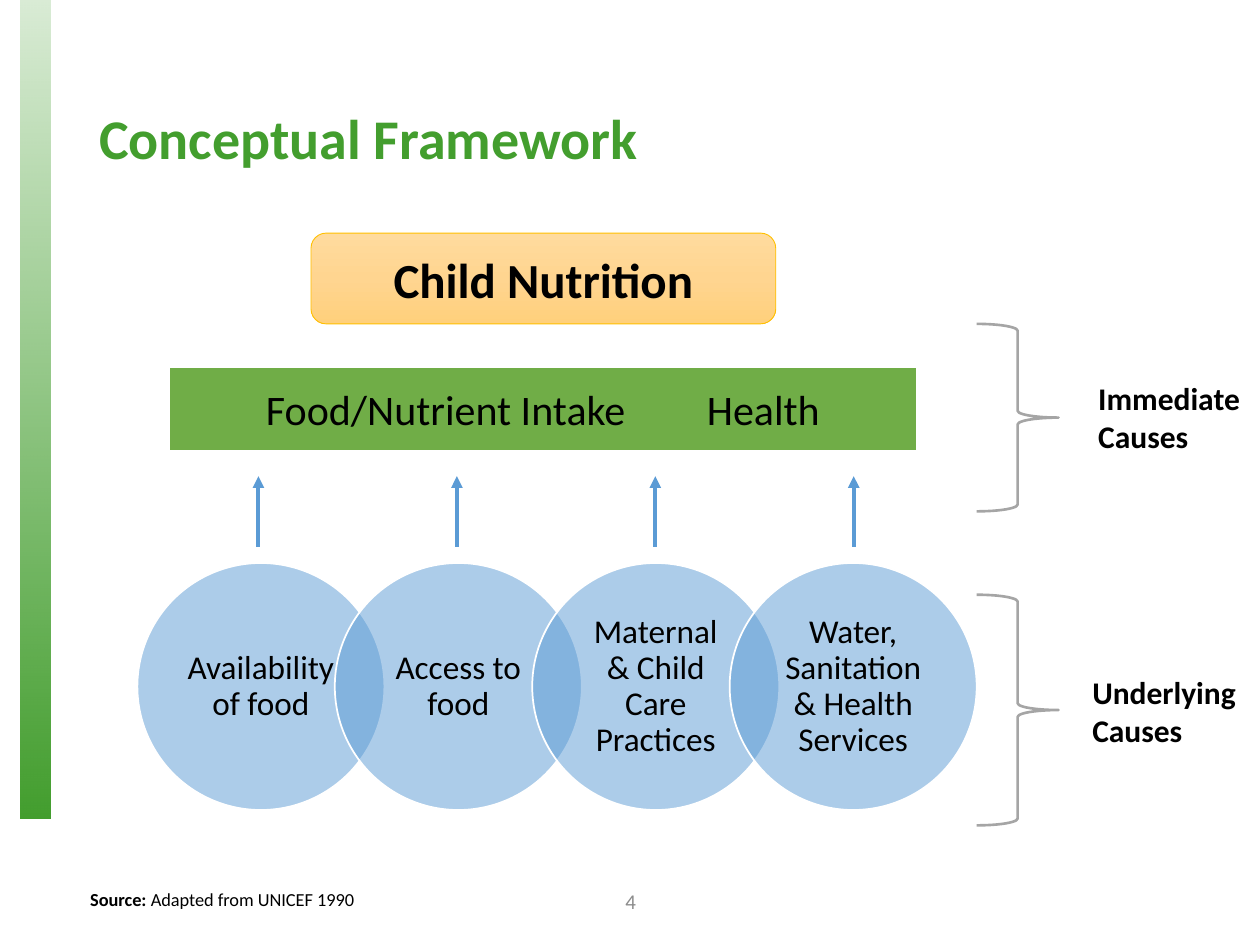
from dataclasses import dataclass

import pptx
import pptx.dml.color
import pptx.enum.shapes
import pptx.enum.text
import pptx.oxml
import pptx.oxml.ns
import pptx.util

Cm = pptx.util.Cm
Pt = pptx.util.Pt
Shape = pptx.enum.shapes.MSO_SHAPE
Align = pptx.enum.text.PP_ALIGN
Anchor = pptx.enum.text.MSO_ANCHOR

FONT = "Calibri"
COLORS = {
    "green": "439E2E",
    "bar": "70AD47",
    "blue": "5B9BD5",
    "gold": "FFC000",
    "gold_top": "FFDB9E",
    "gold_middle": "FFD590",
    "gold_bottom": "FFD07C",
    "gray": "A5A5A5",
    "number": "8C8C8C",
    "black": "000000",
    "white": "FFFFFF",
}


@dataclass
class Box:
    """Position and size in centimetres."""
    left: float
    top: float
    width: float
    height: float

    def lengths(self) -> tuple:
        return Cm(self.left), Cm(self.top), Cm(self.width), Cm(self.height)


@dataclass
class TextStyle:
    size: float
    color: str = "black"
    bold: bool = False
    align: Align = Align.LEFT
    anchor: Anchor = Anchor.TOP
    line_spacing: float = 1.0


@dataclass
class CauseGroup:
    label: str
    label_box: Box
    brace_box: Box


def rgb(name: str) -> pptx.dml.color.RGBColor:
    return pptx.dml.color.RGBColor.from_string(COLORS[name])


def write_text(shape, text: str, style: TextStyle) -> None:
    frame = shape.text_frame
    frame.word_wrap = True
    frame.vertical_anchor = style.anchor
    paragraph = frame.paragraphs[0]
    paragraph.text = text
    paragraph.alignment = style.align
    paragraph.line_spacing = style.line_spacing
    paragraph.font.name = FONT
    paragraph.font.size = Pt(style.size)
    paragraph.font.bold = style.bold
    paragraph.font.color.rgb = rgb(style.color)


def add_text(slide, box: Box, text: str, style: TextStyle):
    shape = slide.shapes.add_textbox(*box.lengths())
    write_text(shape, text, style)
    return shape


def add_shape(slide, kind: Shape, box: Box, fill: str = "", line: str = "", line_width: float = 1):
    shape = slide.shapes.add_shape(kind, *box.lengths())
    shape.shadow.inherit = False
    if fill:
        shape.fill.solid()
        shape.fill.fore_color.rgb = rgb(fill)
    else:
        shape.fill.background()
    if line:
        shape.line.color.rgb = rgb(line)
        shape.line.width = Pt(line_width)
    else:
        shape.line.fill.background()
    return shape


def set_opacity(color_element, percent: int) -> None:
    alpha = color_element.makeelement(pptx.oxml.ns.qn("a:alpha"), {"val": str(percent * 1000)})
    color_element.append(alpha)


def set_vertical_gradient(shape, stops: list[tuple[int, str, int]]) -> None:
    """Each stop is position in percent, colour name and opacity in percent."""
    shape.fill.gradient()
    stop_xml = "".join(
        f'<a:gs pos="{position * 1000}"><a:srgbClr val="{COLORS[color]}">'
        f'<a:alpha val="{opacity * 1000}"/></a:srgbClr></a:gs>'
        for position, color, opacity in stops
    )
    gradient = pptx.oxml.parse_xml(
        f'<a:gradFill {pptx.oxml.ns.nsdecls("a")} rotWithShape="1">'
        f'<a:gsLst>{stop_xml}</a:gsLst><a:lin ang="5400000" scaled="0"/></a:gradFill>'
    )
    properties = shape.element.spPr
    properties.replace(properties.find(pptx.oxml.ns.qn("a:gradFill")), gradient)


def add_up_arrow(slide, x: float, bottom: float, top: float) -> None:
    arrow = slide.shapes.add_connector(
        pptx.enum.shapes.MSO_CONNECTOR.STRAIGHT, Cm(x), Cm(bottom), Cm(x), Cm(top))
    arrow.line.color.rgb = rgb("blue")
    arrow.line.width = Pt(2.25)
    line = arrow.line._get_or_add_ln()
    line.append(line.makeelement(pptx.oxml.ns.qn("a:tailEnd"), {"type": "triangle"}))
    properties = arrow.element.spPr
    properties.append(properties.makeelement(pptx.oxml.ns.qn("a:effectLst"), {}))


def add_cause_circle(slide, left: float, text: str) -> None:
    top, diameter, inset = 11.35, 4.98, 0.73
    circle = add_shape(slide, Shape.OVAL, Box(left, top, diameter, diameter), "blue", "white")
    set_opacity(circle.element.spPr.find(".//" + pptx.oxml.ns.qn("a:srgbClr")), 50)
    inner = diameter - 2 * inset
    label = add_text(slide, Box(left + inset, top + inset, inner, inner), text,
                     TextStyle(19, align=Align.CENTER, anchor=Anchor.MIDDLE, line_spacing=0.9))
    frame = label.text_frame
    frame.margin_left = frame.margin_right = Cm(0.28)
    frame.margin_top = frame.margin_bottom = Cm(0.08)


def add_cause_group(slide, group: CauseGroup) -> None:
    add_shape(slide, Shape.RIGHT_BRACE, group.brace_box, line="gray", line_width=1.5)
    add_text(slide, group.label_box, group.label, TextStyle(18, bold=True))


def main() -> None:
    presentation = pptx.Presentation()
    presentation.slide_width = Cm(25.4)
    presentation.slide_height = Cm(19.05)
    slide = presentation.slides.add_slide(presentation.slide_layouts[6])

    # Side band, title and page number
    band = add_shape(slide, Shape.RECTANGLE, Box(0.41, 0, 0.61, 16.51))
    set_vertical_gradient(band, [(0, "green", 20), (100, "green", 100)])
    add_text(slide, Box(1.75, 1.02, 21.9, 3.68), "Conceptual Framework",
             TextStyle(32, "green", True, anchor=Anchor.MIDDLE, line_spacing=0.9))
    add_text(slide, Box(9.86, 17.65, 5.71, 1.02), "4",
             TextStyle(12, "number", align=Align.CENTER, anchor=Anchor.MIDDLE))

    # Underlying causes: overlapping circles, each with an arrow above
    causes = ["Availability of food", "Access to food",
              "Maternal & Child Care Practices", "Water, Sanitation & Health Services"]
    for index, cause in enumerate(causes):
        add_cause_circle(slide, 2.77 + 3.98 * index, cause)
    for index in range(len(causes)):
        add_up_arrow(slide, 5.21 + 4 * index, bottom=11.02, top=9.6)

    # Immediate causes and outcome
    bar = add_shape(slide, Shape.RECTANGLE, Box(3.4, 7.39, 15.09, 1.7), "bar", "white", 1.5)
    write_text(bar, "Food/Nutrient Intake\t\tHealth",
               TextStyle(24, align=Align.CENTER, anchor=Anchor.MIDDLE))
    outcome = add_shape(slide, Shape.ROUNDED_RECTANGLE, Box(6.27, 4.7, 9.37, 1.83),
                        line="gold", line_width=0.5)
    set_vertical_gradient(outcome, [(0, "gold_top", 100), (50, "gold_middle", 100),
                                    (100, "gold_bottom", 100)])
    write_text(outcome, "Child Nutrition",
               TextStyle(28, bold=True, align=Align.CENTER, anchor=Anchor.MIDDLE))

    # Braces with their labels
    for group in (
        CauseGroup("Underlying Causes", Box(21.77, 13.44, 4.06, 1.8), Box(19.69, 11.99, 1.65, 4.65)),
        CauseGroup("Immediate Causes", Box(21.89, 7.52, 4.06, 1.8), Box(19.69, 6.53, 1.65, 3.78)),
    ):
        add_cause_group(slide, group)

    # Source line
    source = add_text(slide, Box(1.57, 17.78, 18.47, 0.74), "Source: ", TextStyle(10.5))
    paragraph = source.text_frame.paragraphs[0]
    paragraph.runs[0].font.bold = True
    paragraph.add_run().text = "Adapted from UNICEF 1990"

    presentation.save("out.pptx")


if __name__ == "__main__":
    main()
